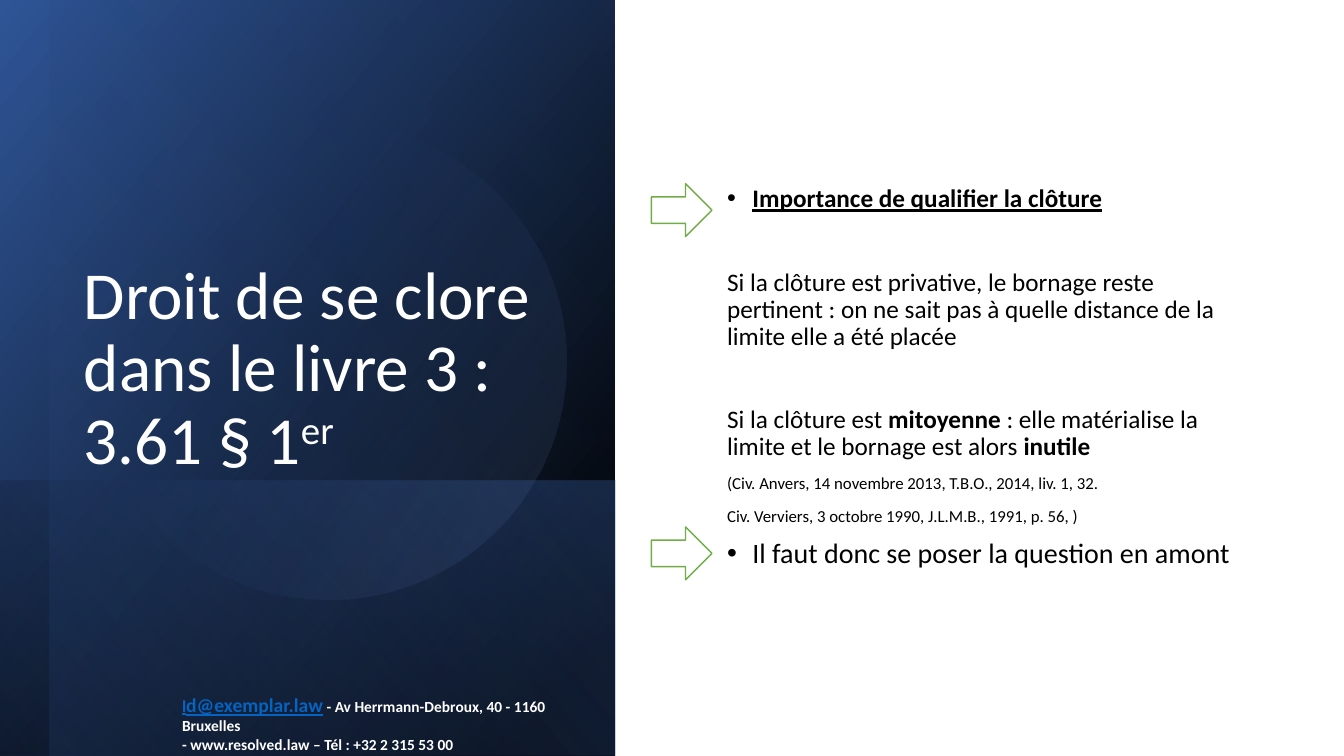
from lxml import etree
from pptx import Presentation
from pptx import util as u
from pptx.dml import color
from pptx.enum import shapes, text
from pptx.oxml import ns

WIDTH, HEIGHT = 13.33, 7.5
PANEL = (0, 0, 6.1, HEIGHT)
CONTENT = (6.1, 0, WIDTH - 6.1, HEIGHT)
FONT = "Calibri"
SHAPE = shapes.MSO_SHAPE


def rgb(value):
    return color.RGBColor.from_string(value)


def share(box, left, top, width, height):
    x, y, w, h = box
    return x + left * w, y + top * h, width * w, height * h


def place(shape, box):
    shape.left, shape.top, shape.width, shape.height = map(u.Inches, box)


def child(parent, tag, **attributes):
    element = etree.SubElement(parent, ns.qn(tag))
    for name, value in attributes.items():
        element.set(name, str(value))
    return element


def add_run(paragraph, content, size=18, fill="000000", bold=False,
            underline=False, baseline=0):
    run = paragraph.add_run()
    run.text = content
    font = run.font
    font.name, font.size, font.bold, font.underline = FONT, u.Pt(size), bold, underline
    font.color.rgb = rgb(fill)
    if baseline:
        run._r.get_or_add_rPr().set("baseline", str(baseline * 1000))


def set_bullet(paragraph, bulleted):
    properties = paragraph._p.get_or_add_pPr()
    indent = u.Inches(0.25) if bulleted else 0
    properties.set("marL", str(indent))
    properties.set("indent", str(-indent))
    if bulleted:
        child(properties, "a:buFont", typeface="Arial")
        child(properties, "a:buChar", char="•")
    else:
        child(properties, "a:buNone")


def prepare_frame(shape, anchor):
    frame = shape.text_frame
    frame.word_wrap = True
    frame.auto_size = text.MSO_AUTO_SIZE.NONE
    frame.vertical_anchor = anchor
    return frame


def add_gradient(slide, kind, box, stops, angle, rotation=90, flip=True):
    x, y, w, h = box
    turned = (x + (w - h) / 2, y + (h - w) / 2, h, w)
    shape = slide.shapes.add_shape(kind, *map(u.Inches, turned))
    shape.shadow.inherit = False
    shape.line.fill.background()
    shape.rotation = rotation
    if flip:
        shape._element.spPr.find(ns.qn("a:xfrm")).set("flipH", "1")
    shape.fill.gradient()
    gradient = shape._element.spPr.find(ns.qn("a:gradFill"))
    for old in list(gradient):
        gradient.remove(old)
    stop_list = child(gradient, "a:gsLst")
    for position, value, alpha in stops:
        stop = child(stop_list, "a:gs", pos=position * 1000)
        child(child(stop, "a:srgbClr", val=value), "a:alpha", val=alpha * 1000)
    child(gradient, "a:lin", ang=angle * 60000, scaled=0)


def add_panel(slide, box):
    add_gradient(slide, SHAPE.RECTANGLE, box,
                 [(8, "000000", 100), (100, "2F5597", 100)], 50)
    add_gradient(slide, SHAPE.RECTANGLE, share(box, 0, 0.635, 1, 0.365),
                 [(2, "4472C4", 29), (100, "000000", 30)], 130)
    add_gradient(slide, SHAPE.RECTANGLE, share(box, 0.08, 0, 0.92, 1),
                 [(0, "000000", 0), (99, "4472C4", 11)], 130)
    x, y, w, h = box
    add_gradient(slide, SHAPE.OVAL, (x + 0.9, y + 1.23, 4.72, 4.72),
                 [(39, "4472C4", 0), (100, "8FAADC", 15)], 290, 101.6, False)


def add_title(slide, box):
    title = slide.shapes.title
    slide.shapes._spTree.append(title._element)
    place(title, share(box, 0.12, 0.09, 0.76, 0.55))
    paragraph = prepare_frame(title, text.MSO_ANCHOR.BOTTOM).paragraphs[0]
    paragraph.alignment = text.PP_ALIGN.LEFT
    paragraph.line_spacing = 0.9
    add_run(paragraph, "Droit de se clore dans le livre 3 : 3.61 § 1", 48, "FFFFFF")
    add_run(paragraph, "er", 48, "FFFFFF", baseline=30)


def add_contact(slide, box):
    contact = slide.shapes.add_textbox(0, 0, 0, 0)
    place(contact, share(box, 0.28, 0.91, 0.7, 0.07))
    frame = prepare_frame(contact, text.MSO_ANCHOR.TOP)
    address = frame.paragraphs[0]
    add_run(address, "l", 12, "0563C1", True, True)
    add_run(address, "d@exemplar.law", 14, "0563C1", True, True)
    add_run(address, " - Av Herrmann-Debroux, 40 - 1160 Bruxelles", 11, "FFFFFF", True)
    add_run(frame.add_paragraph(), "- www.resolved.law – Tél : +32 2 315 53 00",
            11, "FFFFFF", True)


def add_body(slide, box):
    body = slide.placeholders[1]
    slide.shapes._spTree.append(body._element)
    place(body, share(box, 0.14, 0.1, 0.74, 0.8))
    frame = prepare_frame(body, text.MSO_ANCHOR.MIDDLE)
    strong = {"bold": True}
    small = {"size": 12}
    items = [
        (True, 0, [("Importance de qualifier la clôture",
                    {"bold": True, "underline": True})]),
        (False, 40, [("Si la clôture est privative, le bornage reste pertinent : "
                      "on ne sait pas à quelle distance de la limite elle a été "
                      "placée", {})]),
        (False, 40, [("Si la clôture est ", {}), ("mitoyenne", strong),
                     (" : elle matérialise la limite et le bornage est alors ", {}),
                     ("inutile", strong)]),
        (False, 10, [("(Civ. Anvers, 14 novembre 2013, T.B.O., 2014, liv. 1, 32.",
                      small)]),
        (False, 10, [("Civ. Verviers, 3 octobre 1990, J.L.M.B., 1991, p. 56, )",
                      small)]),
        (True, 10, [("Il faut donc se poser la question en amont", {"size": 20})]),
    ]
    for index, (bulleted, space, runs) in enumerate(items):
        paragraph = frame.add_paragraph() if index else frame.paragraphs[0]
        paragraph.line_spacing = 0.9
        paragraph.space_before = u.Pt(space)
        set_bullet(paragraph, bulleted)
        for content, style in runs:
            add_run(paragraph, content, **style)


def add_arrows(slide, box):
    for top in (0.243, 0.697):
        arrow = slide.shapes.add_shape(SHAPE.RIGHT_ARROW, 0, 0, 0, 0)
        place(arrow, share(box, 0.05, top, 0.083, 0.07))
        arrow.shadow.inherit = False
        arrow.fill.solid()
        arrow.fill.fore_color.rgb = rgb("FFFFFF")
        arrow.line.color.rgb = rgb("70AD47")
        arrow.line.width = u.Pt(1)


def main():
    presentation = Presentation()
    presentation.slide_width = u.Inches(WIDTH)
    presentation.slide_height = u.Inches(HEIGHT)
    slide = presentation.slides.add_slide(presentation.slide_layouts[1])
    add_panel(slide, PANEL)
    add_title(slide, PANEL)
    add_body(slide, CONTENT)
    add_contact(slide, PANEL)
    add_arrows(slide, CONTENT)
    presentation.save("out.pptx")


if __name__ == "__main__":
    main()
